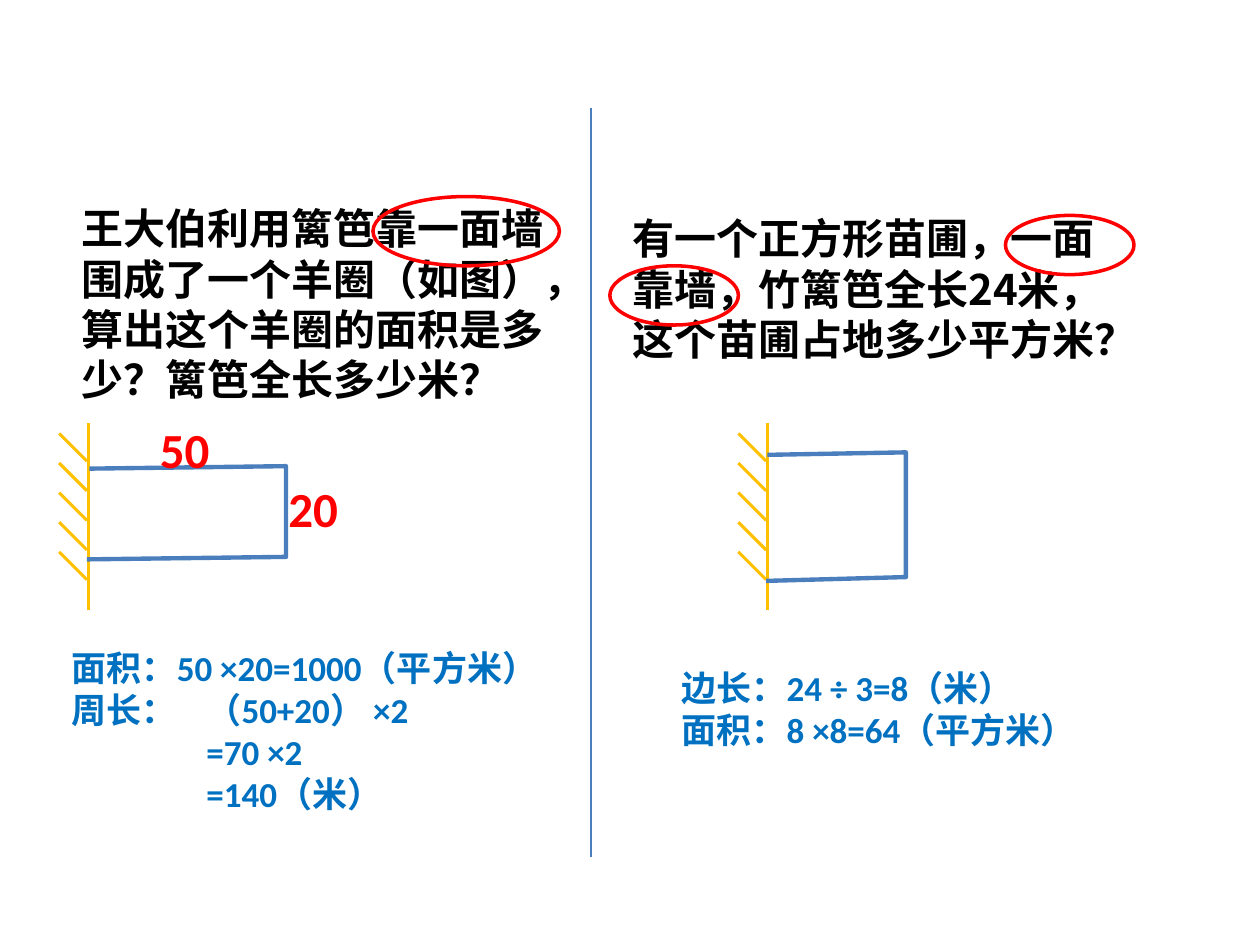
from lxml.etree import SubElement
from pptx import Presentation
from pptx.dml.color import RGBColor
from pptx.enum.shapes import MSO_CONNECTOR, MSO_SHAPE
from pptx.enum.text import MSO_AUTO_SIZE
from pptx.oxml.ns import qn
from pptx.util import Inches, Pt

COLORS = {"black": "000000", "blue": "0070C0", "red": "FF0000",
          "wall": "FFC000", "fence": "4B7EBC"}
CJK, LATIN = "Noto Sans CJK SC", "Calibri"

# Text blocks: box, size, font, colour, paragraphs as (text, left margin, first indent)
STEP = 1.07  # where the working of the perimeter lines up
TEXTS = [
    ((0.55, 1.56, 4.14, 1.72), 24, CJK, "black",
     [("王大伯利用篱笆靠一面墙围成了一个羊圈（如图），算出这个羊圈的面积是多少？篱笆全长多少米？", 0, 0)]),
    ((4.92, 1.64, 4.14, 1.31), 24, CJK, "black",
     [("有一个正方形苗圃，一面靠墙，竹篱笆全长24米，这个苗圃占地多少平方米？", 0, 0)]),
    ((1.17, 3.28, 0.78, 0.57), 28, LATIN, "red", [("50", 0, 0)]),
    ((2.19, 3.75, 0.78, 0.57), 28, LATIN, "red", [("20", 0, 0)]),
    ((0.47, 5.08, 3.98, 1.45), 20, LATIN, "blue",
     [("面积：50 ×20=1000（平方米）", 0, 0),
      ("周长：\t（50+20） ×2", STEP, -STEP),
      ("=70 ×2", STEP, 0),
      ("=140（米）", STEP, 0)]),
    ((5.31, 5.24, 3.98, 0.77), 20, LATIN, "blue",
     [("边长：24 ÷ 3=8（米）", 0, 0),
      ("面积：8 ×8=64（平方米）", 0, 0)]),
]

# Pens: wall position and fence corners
PENS = [
    (0.7, [(0.71, 3.72), (2.27, 3.7), (2.27, 4.42), (0.69, 4.44)]),
    (6.09, [(6.09, 3.61), (7.19, 3.59), (7.19, 4.58), (6.08, 4.61)]),
]
WALL_TOP, WALL_BOTTOM = 3.36, 4.84
HATCHES, HATCH_TOP, HATCH_GAP, HATCH_SIZE = 5, 3.44, 0.235, 0.22

# Rings around the key words
RINGS = [(2.96, 1.56, 1.48, 0.55), (7.98, 1.71, 1.02, 0.47), (4.84, 2.11, 1.02, 0.47)]


def rgb(name):
    return RGBColor.from_string(COLORS[name])


def add_text(slide, box, size, face, color, paragraphs):
    tf = slide.shapes.add_textbox(*map(Inches, box)).text_frame
    tf.word_wrap = True
    tf.auto_size = MSO_AUTO_SIZE.SHAPE_TO_FIT_TEXT
    for i, (text, margin, indent) in enumerate(paragraphs):
        p = tf.add_paragraph() if i else tf.paragraphs[0]
        p.text = text
        font = p.font
        font.size, font.bold, font.name = Pt(size), True, face
        font.color.rgb = rgb(color)
        pPr = p._p.pPr
        SubElement(pPr.find(qn("a:defRPr")), qn("a:ea"), typeface=CJK)
        if margin:
            pPr.set("marL", str(Inches(margin)))
            pPr.set("indent", str(Inches(indent)))


def add_line(slide, x1, y1, x2, y2, color, width):
    line = slide.shapes.add_connector(
        MSO_CONNECTOR.STRAIGHT, *map(Inches, (x1, y1, x2, y2)))
    line.line.color.rgb = rgb(color)
    line.line.width = Pt(width)
    SubElement(line._element.spPr, qn("a:effectLst"))


def outline(shape, color, width):
    shape.shadow.inherit = False
    shape.fill.background()
    shape.line.color.rgb = rgb(color)
    shape.line.width = Pt(width)


def add_pen(slide, wall_x, corners):
    add_line(slide, wall_x, WALL_TOP, wall_x, WALL_BOTTOM, "wall", 1.75)
    right = wall_x - 0.01
    for i in range(HATCHES):
        y = HATCH_TOP + i * HATCH_GAP
        add_line(slide, right - HATCH_SIZE, y, right, y + HATCH_SIZE, "wall", 1.75)
    points = [(Inches(x), Inches(y)) for x, y in corners]
    fence = slide.shapes.build_freeform(*points[0])
    fence.add_line_segments(points[1:], close=False)
    outline(fence.convert_to_shape(), "fence", 2.5)


def main():
    prs = Presentation()
    prs.slide_width, prs.slide_height = Inches(10), Inches(7.5)
    slide = prs.slides.add_slide(prs.slide_layouts[6])

    # Divider and drawings
    add_line(slide, 4.69, 0.86, 4.69, 6.8, "fence", 0.75)
    for pen in PENS:
        add_pen(slide, *pen)

    # Problems, measures and answers
    for block in TEXTS:
        add_text(slide, *block)

    for ring in RINGS:
        outline(slide.shapes.add_shape(MSO_SHAPE.OVAL, *map(Inches, ring)), "red", 2)

    prs.save("out.pptx")


if __name__ == "__main__":
    main()
